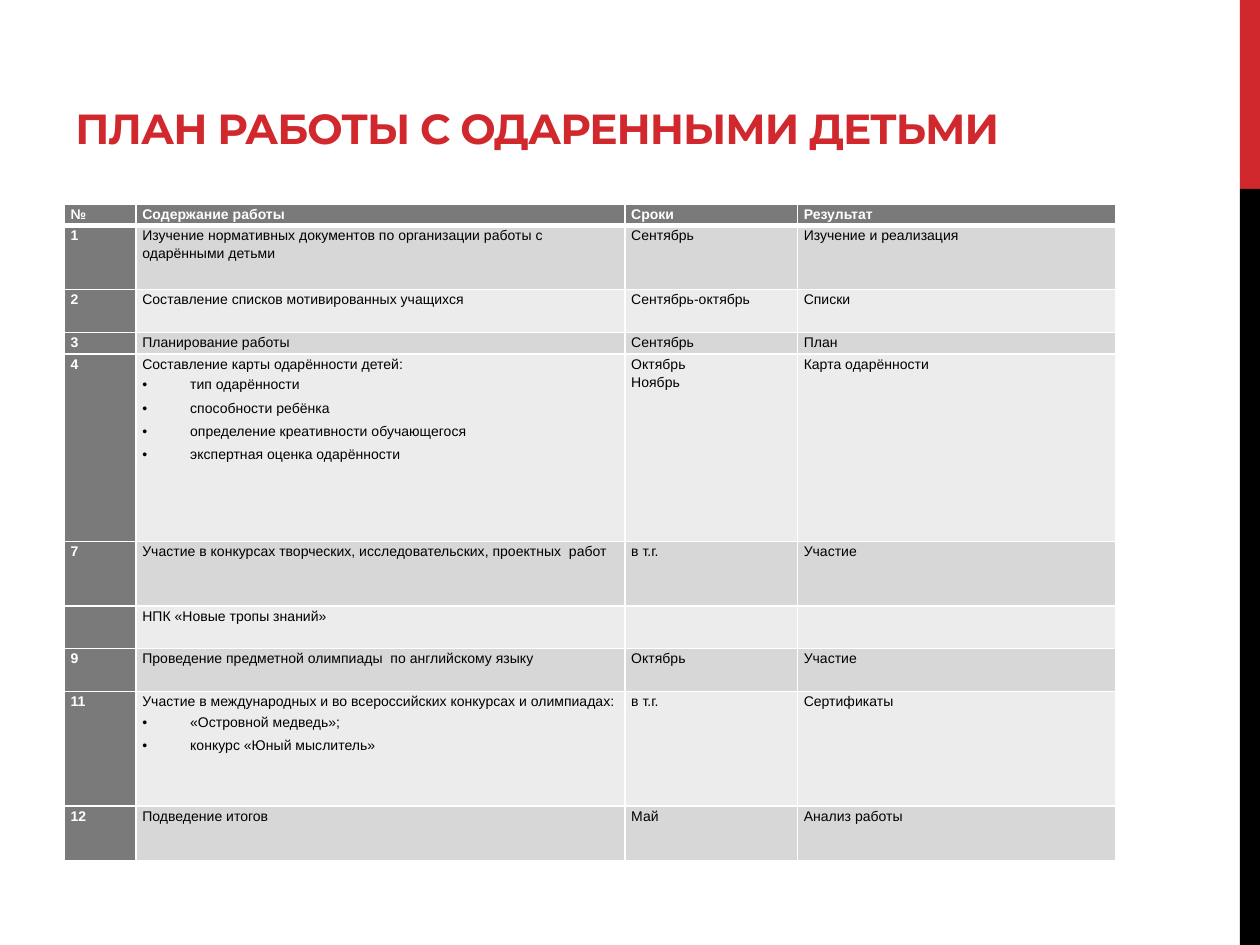
from lxml import etree
from pptx import Presentation
from pptx import util as u
from pptx.dml.color import RGBColor
from pptx.enum import shapes, text
from pptx.oxml import ns

COLORS = {
    "red": "D1282E", "black": "000000", "white": "FFFFFF",
    "header": "7A7A7A", "dark band": "D7D7D7", "light band": "ECECEC",
}
COLUMN_WIDTHS = [0.57, 3.88, 1.37, 2.53]
PLAN = [
    (0.17, "№", "Содержание работы", "Сроки", "Результат"),
    (0.51, "1", "Изучение нормативных документов по организации работы с одарёнными детьми",
     "Сентябрь", "Изучение и реализация"),
    (0.34, "2", "Составление списков мотивированных учащихся", "Сентябрь-октябрь", "Списки"),
    (0.17, "3", "Планирование работы", "Сентябрь", "План"),
    (1.49, "4", "Составление карты одарённости детей:\nтип одарённости\nспособности ребёнка\n"
     "определение креативности обучающегося\nэкспертная оценка одарённости",
     "Октябрь\nНоябрь", "Карта одарённости"),
    (0.51, "7", "Участие в конкурсах творческих, исследовательских, проектных  работ",
     "в т.г.", "Участие"),
    (0.34, "", "НПК «Новые тропы знаний»", "", ""),
    (0.34, "9", "Проведение предметной олимпиады  по английскому языку", "Октябрь", "Участие"),
    (0.91, "11", "Участие в международных и во всероссийских конкурсах и олимпиадах:\n"
     "«Островной медведь»;\nконкурс «Юный мыслитель»", "в т.г.", "Сертификаты"),
    (0.43, "12", "Подведение итогов", "Май", "Анализ работы"),
]


def color(name):
    """Return the named colour."""
    return RGBColor.from_string(COLORS[name])


def write(paragraph, words, font="Arial", size=8, fill="black", bold=False,
          line_spacing=1.15, tracking=0):
    """Add formatted text to a paragraph."""
    paragraph.line_spacing = line_spacing
    run = paragraph.add_run()
    run.text = words
    run.font.name, run.font.size, run.font.bold = font, u.Pt(size), bold
    run.font.color.rgb = color(fill)
    if tracking:
        run.font._element.set("spc", str(round(tracking * 100)))


def add_bullet(paragraph):
    """Give a paragraph a hanging bullet and some space around it."""
    paragraph.space_before = paragraph.space_after = u.Pt(1.5)
    properties = paragraph._p.get_or_add_pPr()
    indent = u.Inches(0.38)
    properties.set("marL", str(indent))
    properties.set("indent", str(-indent))
    etree.SubElement(properties, ns.qn("a:buFont"), typeface="Arial")
    etree.SubElement(properties, ns.qn("a:buChar"), char="•")


def add_borders(cell, bottom, top):
    """Draw white lines on the four sides of a cell."""
    properties = cell._tc.get_or_add_tcPr()
    widths = {"L": 1, "R": 1, "T": top, "B": bottom}
    for position, (side, width) in enumerate(widths.items()):
        line = etree.Element(ns.qn(f"a:ln{side}"), w=str(u.Pt(width)))
        fill = etree.SubElement(line, ns.qn("a:solidFill"))
        etree.SubElement(fill, ns.qn("a:srgbClr"), val=COLORS["white"])
        properties.insert(position, line)


def fill_cell(cell, words, row, column):
    """Write and colour one cell of the plan."""
    is_header = row == 0 or column == 0
    band = "dark band" if row % 2 else "light band"
    cell.fill.solid()
    cell.fill.fore_color.rgb = color("header" if is_header else band)
    cell.margin_left = cell.margin_right = u.Inches(0.05)
    cell.margin_top = cell.margin_bottom = 0
    add_borders(cell, bottom=3 if row == 0 else 1, top=3 if row == 1 else 1)
    frame = cell.text_frame
    for index, line in enumerate(words.split("\n")):
        paragraph = frame.add_paragraph() if index else frame.paragraphs[0]
        write(paragraph, line, fill="white" if is_header else "black", bold=is_header)
        if index and column == 1:
            add_bullet(paragraph)


def add_plan(slide, left, top, width, height):
    """Place the work plan table in the given box."""
    frame = slide.shapes.add_table(len(PLAN), len(COLUMN_WIDTHS), left, top, width, height)
    table = frame.table
    table.first_row = table.horz_banding = False
    for column, column_width in zip(table.columns, COLUMN_WIDTHS):
        column.width = u.Inches(column_width)
    for row, (row_height, *entries) in enumerate(PLAN):
        table.rows[row].height = u.Inches(row_height)
        for column, words in enumerate(entries):
            fill_cell(table.cell(row, column), words, row, column)


def add_title(slide, left, top, width, height):
    """Place the slide title above the foot of the given box."""
    frame = slide.shapes.add_textbox(left, top, width, height).text_frame
    frame.word_wrap = True
    frame.vertical_anchor = text.MSO_ANCHOR.BOTTOM
    frame.margin_bottom = u.Inches(0.46)
    write(frame.paragraphs[0], "ПЛАН РАБОТЫ С ОДАРЕННЫМИ ДЕТЬМИ", font="Montserrat",
          size=24, fill="red", bold=True, line_spacing=1.0, tracking=-0.6)


def add_side_band(slide, left, top, width, height):
    """Place the band whose upper fifth is red and the rest black."""
    split = height // 5
    for name, offset, part in (("red", 0, split), ("black", split, height - split)):
        shape = slide.shapes.add_shape(
            shapes.MSO_SHAPE.RECTANGLE, left, top + offset, width, part)
        shape.shadow.inherit = False
        shape.fill.solid()
        shape.fill.fore_color.rgb = color(name)
        shape.line.fill.background()


def main():
    """Build and save the slide."""
    presentation = Presentation()
    presentation.slide_width, presentation.slide_height = u.Inches(10), u.Inches(7.5)
    slide = presentation.slides.add_slide(presentation.slide_layouts[6])
    add_side_band(slide, u.Inches(9.84), 0, u.Inches(0.16), u.Inches(7.5))
    add_title(slide, u.Inches(0.5), u.Inches(0.17), u.Inches(8.28), u.Inches(1.5))
    add_plan(slide, u.Inches(0.51), u.Inches(1.62), u.Inches(8.35), u.Inches(5.23))
    presentation.save("out.pptx")


if __name__ == "__main__":
    main()
